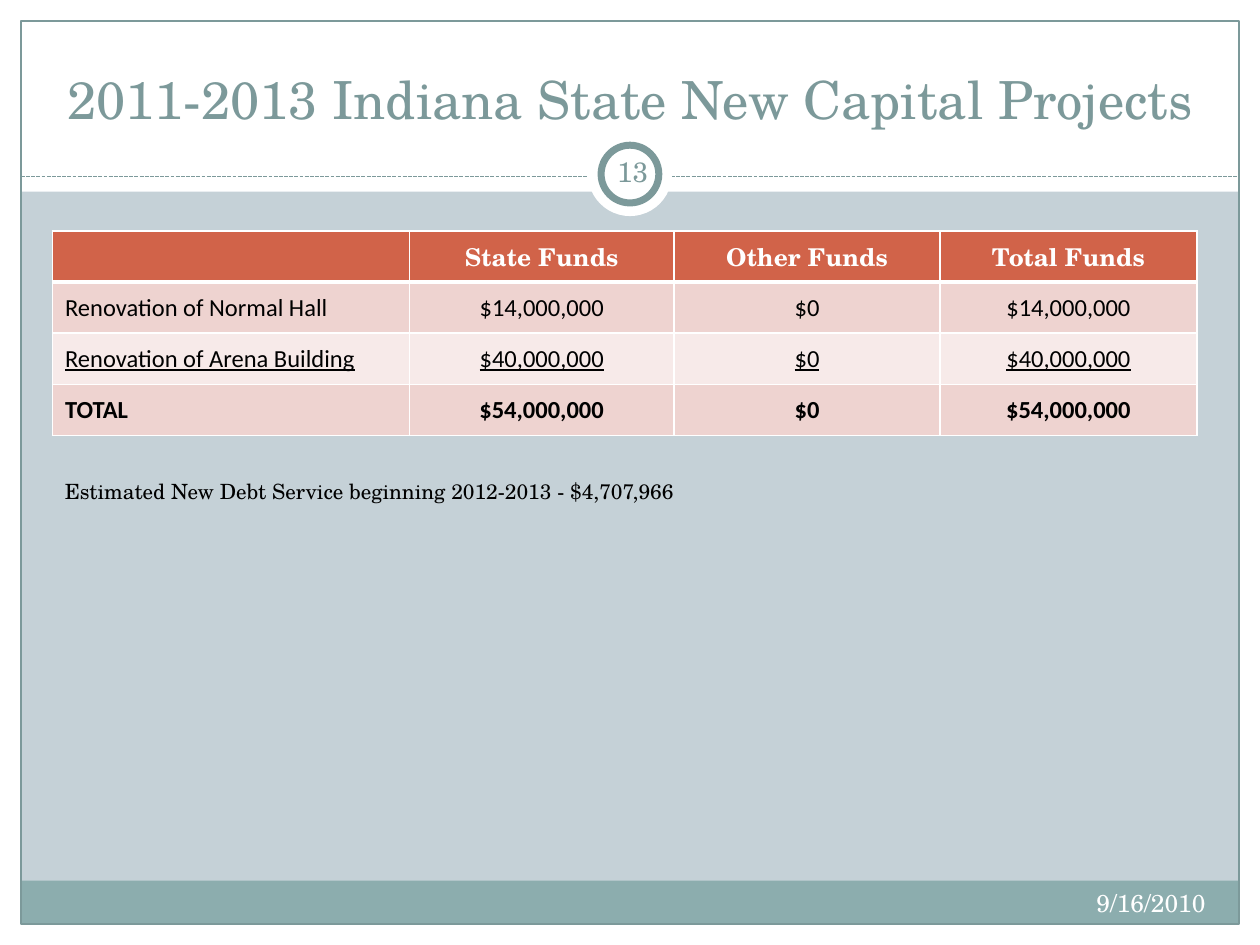
from lxml import etree
from pptx import Presentation, util as u
from pptx.dml.color import RGBColor
from pptx.enum import dml, shapes, text
from pptx.oxml import ns

Pt = u.Pt
HUES = {"white": "FFFFFF", "black": "000000", "back": "C5D1D7", "teal": "7C999A",
        "foot": "8CADAE", "head": "D16349", "dark": "EED3D0", "light": "F7EAE9"}
SERIF, SANS = "TeX Gyre Schola", "Calibri"
LEFT, MID, RIGHT = text.PP_ALIGN.LEFT, text.PP_ALIGN.CENTER, text.PP_ALIGN.RIGHT
TOP, CENTER, LOW = (text.MSO_ANCHOR.TOP, text.MSO_ANCHOR.MIDDLE,
                    text.MSO_ANCHOR.BOTTOM)


def hue(name):
    return RGBColor.from_string(HUES[name])


def write(frame, words, align, color, **form):
    """Put one formatted run in a text frame; form holds font values."""
    para = frame.paragraphs[0]
    para.alignment = align
    run = para.add_run()
    run.text = words
    run.font.color.rgb = hue(color)
    for key, value in form.items():
        setattr(run.font, key, value)


deck = Presentation()
deck.slide_width, deck.slide_height = Pt(720), Pt(540)
slide = deck.slides.add_slide(deck.slide_layouts[6])
slide.background.fill.solid()
slide.background.fill.fore_color.rgb = hue("back")

# White margins, footer bar, frame and badge: kind, box, fill, line width
RECT, OVAL = shapes.MSO_SHAPE.RECTANGLE, shapes.MSO_SHAPE.OVAL
parts = [
    (RECT, (0, 528, 720, 12), "white", 0),
    (RECT, (0, 0, 720, 109.5), "white", 0),
    (RECT, (0, 0, 12, 540), "white", 0),
    (RECT, (708, 0, 12, 540), "white", 0),
    (RECT, (11.75, 503.25, 696, 24.5), "foot", 0),
    (RECT, (12, 12, 696, 516), None, 0.75),
    (OVAL, (336, 75.5, 48, 48), "white", 0),
    (OVAL, (343.5, 83, 33, 33), "white", 4),
]
for kind, box, fill, width in parts:
    if kind == OVAL and not width:
        rule = slide.shapes.add_connector(shapes.MSO_CONNECTOR.STRAIGHT,
                                          Pt(12), Pt(100.75), Pt(708), Pt(100.75))
        rule.line.color.rgb = hue("teal")
        rule.line.width = Pt(0.75)
        rule.line.dash_style = dml.MSO_LINE.SQUARE_DOT
        etree.SubElement(rule._element.spPr, ns.qn("a:effectLst"))
    part = slide.shapes.add_shape(kind, *map(Pt, box))
    part.shadow.inherit = False
    if fill:
        part.fill.solid()
        part.fill.fore_color.rgb = hue(fill)
    else:
        part.fill.background()
    if width:
        part.line.color.rgb = hue("teal")
        part.line.width = Pt(width)
    else:
        part.line.fill.background()

# Text boxes: box, words, size, color, align, anchor, side inset
notes = [
    ((24, 18, 672, 60), "2011-2013 Indiana State New Capital Projects",
     30, "teal", MID, LOW, 7.2),
    ((30, 270, 618, 36), "Estimated New Debt Service beginning 2012-2013 - $4,707,966",
     12, "black", LEFT, TOP, 7.2),
    ((456, 504, 240, 28.8), "9/16/2010", 14, "white", RIGHT, TOP, 7.2),
    ((343.5, 80.75, 36, 34.5), "13", 16, "teal", MID, CENTER, 3.6),
]
for box, words, size, color, align, anchor, inset in notes:
    frame = slide.shapes.add_textbox(*map(Pt, box)).text_frame
    form = {"word_wrap": True, "vertical_anchor": anchor,
            "margin_left": Pt(inset), "margin_right": Pt(inset)}
    for key, value in form.items():
        setattr(frame, key, value)
    write(frame, words, align, color, size=Pt(size), name=SERIF)

# Funds table: fill, text color, font values, cells
rows = [
    ("head", "white", {"name": SERIF, "bold": True},
     ["", "State Funds", "Other Funds", "Total Funds"]),
    ("dark", "black", {"name": SANS, "bold": False},
     ["Renovation of Normal Hall", "$14,000,000", "$0", "$14,000,000"]),
    ("light", "black", {"name": SANS, "bold": False, "underline": True},
     ["Renovation of Arena Building", "$40,000,000", "$0", "$40,000,000"]),
    ("dark", "black", {"name": SANS, "bold": True},
     ["TOTAL", "$54,000,000", "$0", "$54,000,000"]),
]
table = slide.shapes.add_table(4, 4, Pt(30), Pt(132), Pt(654), Pt(116.8)).table
for col, width in zip(table.columns, (204, 151.25, 152, 146.75)):
    col.width = Pt(width)
for r, (fill, color, form, cells) in enumerate(rows):
    table.rows[r].height = Pt(29.2)
    for c, words in enumerate(cells):
        cell = table.cell(r, c)
        cell.vertical_anchor = CENTER if r else TOP
        if r == 3 and c:
            for side in ("left", "right", "top", "bottom"):
                setattr(cell, "margin_" + side, Pt(0.7))
        for side in "LRTB":
            thick = (r, side) in ((0, "B"), (1, "T"))
            edge = etree.SubElement(cell._tc.get_or_add_tcPr(), ns.qn("a:ln" + side),
                                    w=str(Pt(3 if thick else 1)))
            paint = etree.SubElement(edge, ns.qn("a:solidFill"))
            etree.SubElement(paint, ns.qn("a:srgbClr"), val=HUES["white"])
        cell.fill.solid()
        cell.fill.fore_color.rgb = hue(fill)
        if words:
            write(cell.text_frame, words, MID if c else LEFT, color,
                  size=Pt(14), **form)

deck.save("out.pptx")
